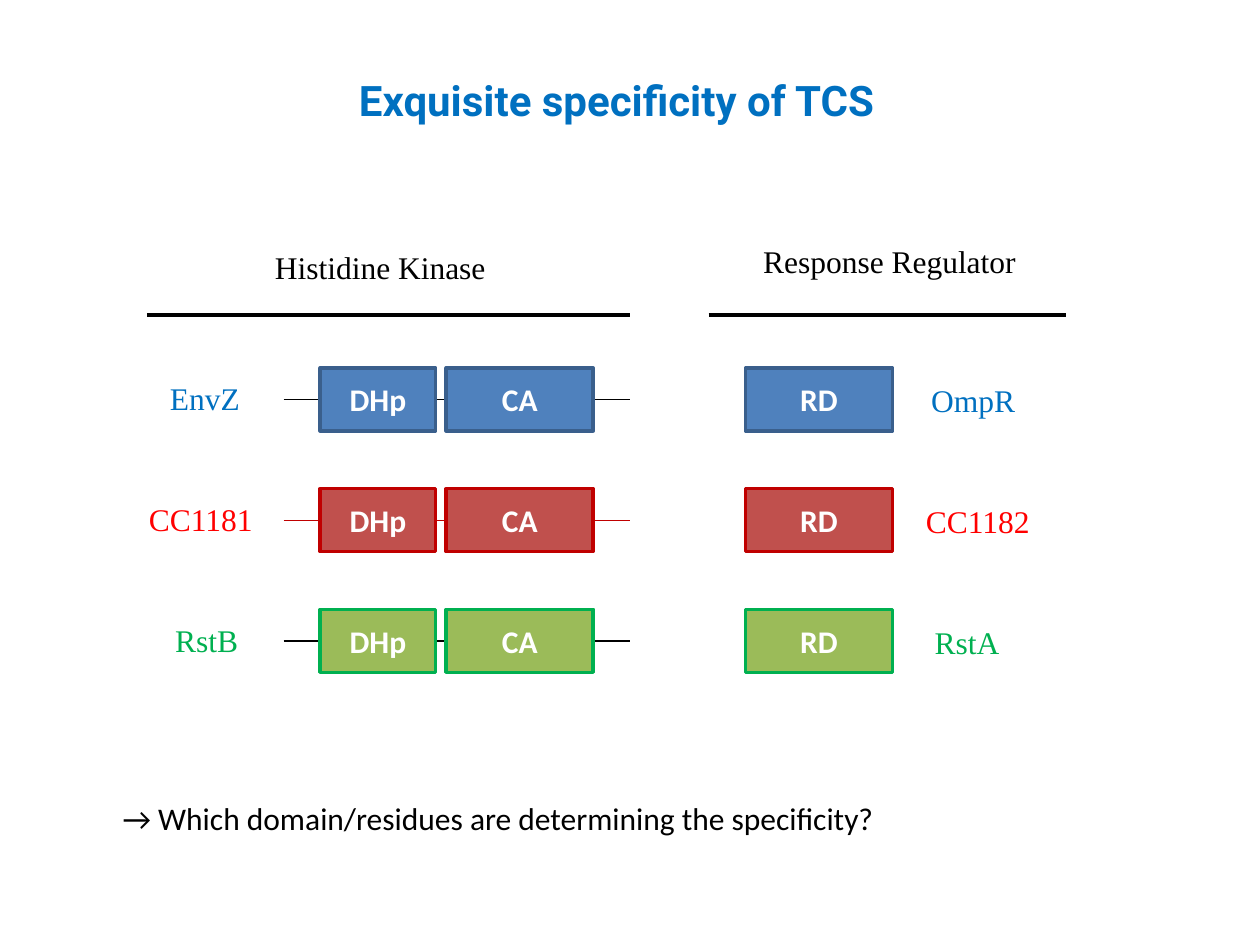
from pptx import Presentation
from pptx.dml.color import RGBColor
from pptx.enum.shapes import MSO_CONNECTOR, MSO_SHAPE
from pptx.enum.text import MSO_ANCHOR, MSO_AUTO_SIZE, PP_ALIGN
from pptx.oxml.ns import qn
from pptx.util import Pt
from lxml.etree import SubElement


def add_span(box, text, font, size, color, bold=False):
    span = box.text_frame.paragraphs[0].add_run()
    span.text = text
    span.font.name = font
    span.font.size = Pt(size)
    span.font.bold = bold
    span.font.color.rgb = RGBColor.from_string(color)


def add_rule(page, left, right, top, color, weight):
    rule = page.shapes.add_connector(
        MSO_CONNECTOR.STRAIGHT, Pt(left), Pt(top), Pt(right), Pt(top)
    )
    rule.line.color.rgb = RGBColor.from_string(color)
    rule.line.width = Pt(weight)
    SubElement(rule._element.spPr, qn("a:effectLst"))


deck = Presentation()
deck.slide_width = Pt(720)
deck.slide_height = Pt(540)
page = deck.slides.add_slide(deck.slide_layouts[6])

serif = "Times New Roman"
labels = [
    ("Exquisite specificity of TCS", 198, 39, 333.5, 36, "Roboto", 24, "0070C0", True),
    ("Histidine Kinase", 150, 138, 136, 29, serif, 18, "000000", False),
    ("Response Regulator", 429, 135, 160.5, 29, serif, 18, "000000", False),
    ("→ Which domain/residues are determining the specificity?",
     63, 453, 451, 29, "Calibri", 18, "000000", False),
]
domains = [("DHp", 183, 66), ("CA", 255, 84), ("RD", 426, 84)]
pairs = [
    ("EnvZ", 90, 55, "OmpR", 525, 63, "0070C0", "4F81BD", "3A5F8C", "000000"),
    ("CC1181", 78, 74, "CC1182", 522, 74, "FF0000", "C0504D", "C00000", "C00000"),
    ("RstB", 93, 51, "RstA", 527, 52, "00B050", "9BBB59", "00B050", "000000"),
]

for row, pair in enumerate(pairs):
    kinase, kinase_left, kinase_width, regulator, regulator_left, regulator_width = pair[:6]
    text_color, fill, outline, backbone = pair[6:]
    top = 210.25 + 69 * row
    add_rule(page, 162, 360, top + 18, backbone, 0.75)
    for name, left, width in domains:
        box = page.shapes.add_shape(
            MSO_SHAPE.RECTANGLE, Pt(left), Pt(top), Pt(width), Pt(36)
        )
        box.shadow.inherit = False
        box.fill.solid()
        box.fill.fore_color.rgb = RGBColor.from_string(fill)
        box.line.color.rgb = RGBColor.from_string(outline)
        box.line.width = Pt(2)
        box.text_frame.vertical_anchor = MSO_ANCHOR.MIDDLE
        box.text_frame.paragraphs[0].alignment = PP_ALIGN.CENTER
        add_span(box, name, "Calibri", 18, "FFFFFF", True)
    labels += [
        (kinase, kinase_left, top + 3, kinase_width, 29, serif, 18, text_color, False),
        (regulator, regulator_left, top + 4, regulator_width, 29, serif, 18, text_color, False),
    ]

for left, right in [(84, 360), (405, 609)]:
    add_rule(page, left, right, 180, "000000", 2.25)

for text, left, top, width, height, font, size, color, bold in labels:
    box = page.shapes.add_textbox(Pt(left), Pt(top), Pt(width), Pt(height))
    box.text_frame.word_wrap = False
    box.text_frame.auto_size = MSO_AUTO_SIZE.SHAPE_TO_FIT_TEXT
    add_span(box, text, font, size, color, bold)

deck.save("out.pptx")
